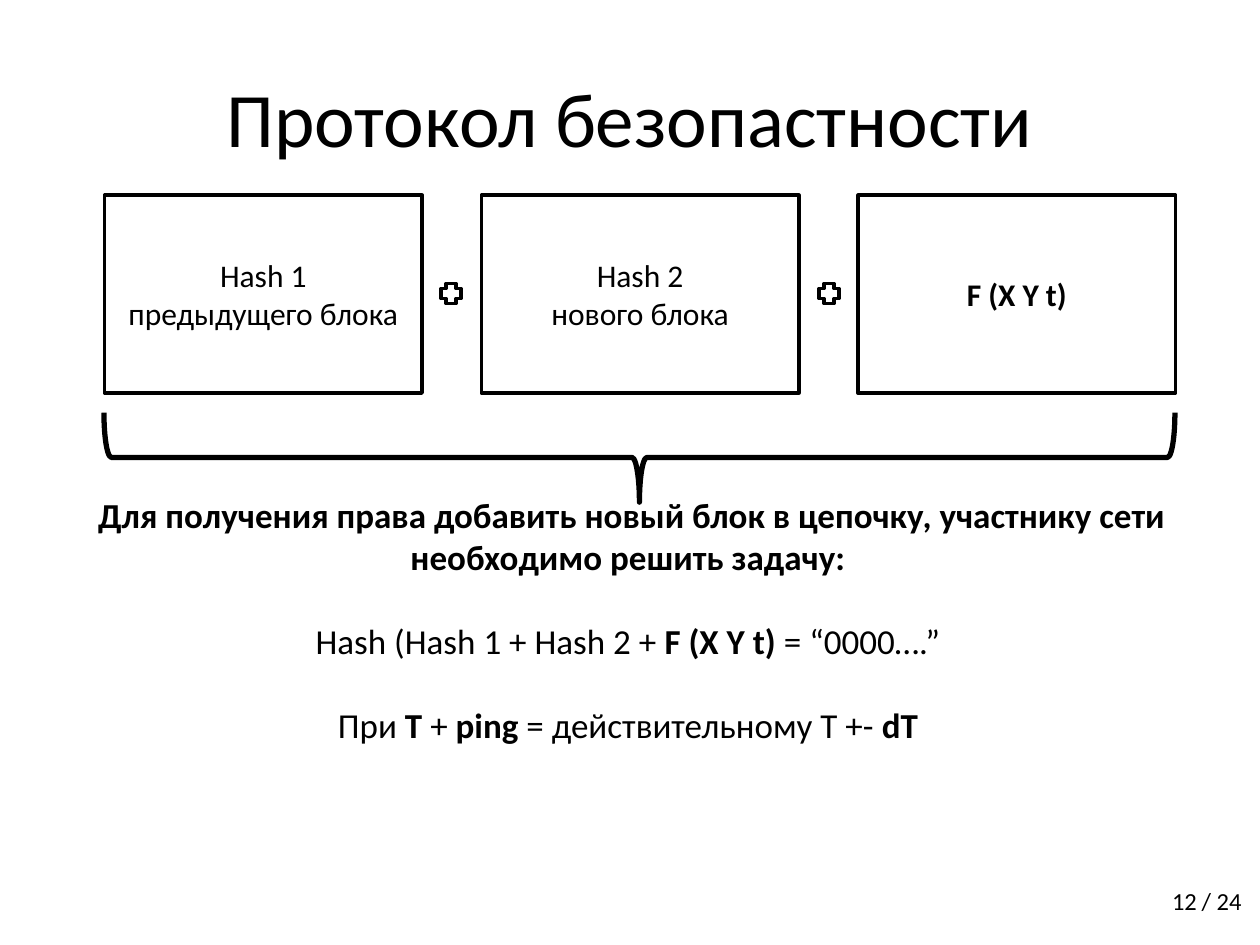
from pptx import Presentation
from pptx.dml.color import RGBColor
from pptx.enum.shapes import MSO_SHAPE as Shape
from pptx.enum.text import MSO_ANCHOR as Anchor, PP_ALIGN as Align
from pptx.util import Inches, Pt

BLACK = "000000"
WHITE = "FFFFFF"


def color(value):
    return RGBColor.from_string(value)


def write(frame, paragraphs, size, align=Align.CENTER, gap=0):
    for index, runs in enumerate(paragraphs):
        para = frame.add_paragraph() if index else frame.paragraphs[0]
        para.alignment = align
        para.space_before = Pt(gap if index else 0)
        for text, bold in runs:
            span = para.add_run()
            span.text = text
            span.font.name = "Calibri"
            span.font.size = Pt(size)
            span.font.bold = bold
            span.font.color.rgb = color(BLACK)


def add_text(page, place, paragraphs, size, align=Align.CENTER, gap=0,
             anchor=Anchor.MIDDLE, wrap=True):
    box = page.shapes.add_textbox(*map(Inches, place))
    frame = box.text_frame
    frame.word_wrap = wrap
    frame.vertical_anchor = anchor
    if not wrap:
        frame.margin_left = frame.margin_right = 0
        frame.margin_top = frame.margin_bottom = 0
    write(frame, paragraphs, size, align, gap)


def add_outline(page, kind, place, width=2, fill=WHITE):
    shape = page.shapes.add_shape(kind, *map(Inches, place))
    shape.shadow.inherit = False
    if fill:
        shape.fill.solid()
        shape.fill.fore_color.rgb = color(fill)
    else:
        shape.fill.background()
    shape.line.color.rgb = color(BLACK)
    shape.line.width = Pt(width)
    return shape


def add_blocks(page):
    left, top, width, height, step = 0.83, 1.55, 2.52, 1.57, 2.99
    blocks = [
        [[("Hash 1", False)], [("предыдущего блока", False)]],
        [[("Hash 2", False)], [("нового блока", False)]],
        [[("F (X Y t)", True)]],
    ]
    for index, paragraphs in enumerate(blocks):
        place = (left + index * step, top, width, height)
        block = add_outline(page, Shape.RECTANGLE, place)
        block.text_frame.word_wrap = True
        block.text_frame.vertical_anchor = Anchor.MIDDLE
        write(block.text_frame, paragraphs, 18)
    for plus_left in (3.5, 6.5):
        add_outline(page, Shape.CROSS, (plus_left, 2.25, 0.16, 0.16))


def add_brace(page):
    brace = add_outline(page, Shape.LEFT_BRACE, (4.72, -0.62, 0.71, 8.5), 3, None)
    brace.rotation = 270


def add_task(page):
    task = [
        [("Для получения права добавить новый блок в цепочку, "
          "участнику сети необходимо решить задачу: ", True)],
        [("Hash (Hash 1 + Hash 2 + ", False), ("F (X Y t)", True),
         (" = “0000….” ", False)],
        [("При ", False), ("Т ", True), ("+ ", False), ("ping ", True),
         ("= действительному T +- ", False), ("dT ", True)],
    ]
    add_text(page, (0.37, 3.87, 9.29, 2.46), task, 20, gap=24, anchor=Anchor.TOP)


def add_page_number(page):
    add_text(page, (8.93, 6.95, 0.57, 0.4), [[("12", False)]], 14,
             Align.RIGHT, wrap=False)
    add_text(page, (9.5, 6.95, 0.39, 0.4), [[("/ 24", False)]], 14, wrap=False)


def main():
    deck = Presentation()
    deck.slide_width = Inches(10)
    deck.slide_height = Inches(7.5)
    page = deck.slides.add_slide(deck.slide_layouts[6])
    add_text(page, (0.5, 0.3, 9, 1.25), [[("Протокол безопастности", False)]], 44)
    add_page_number(page)
    add_blocks(page)
    add_brace(page)
    add_task(page)
    deck.save("out.pptx")


if __name__ == "__main__":
    main()
